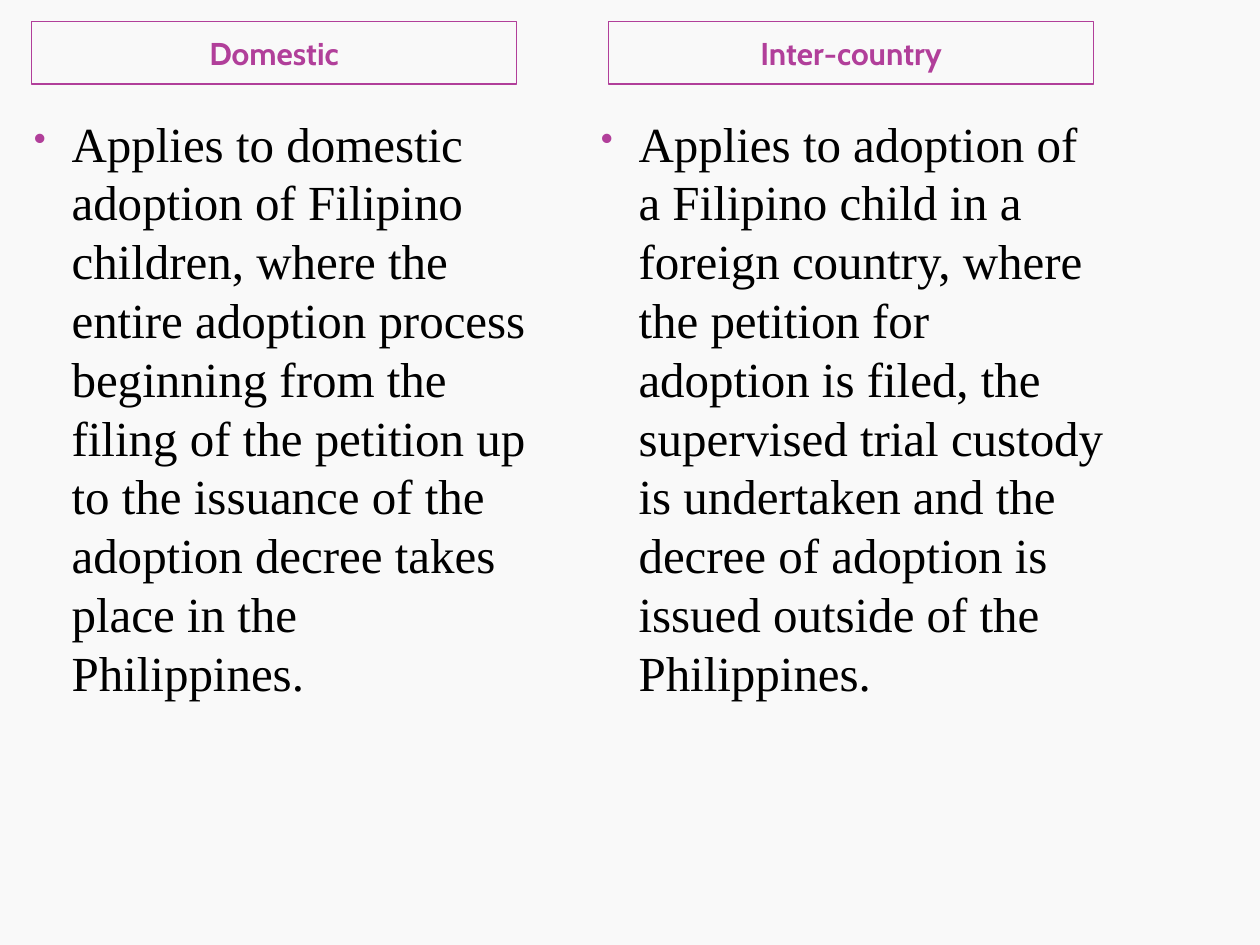
from lxml.etree import SubElement
from pptx import Presentation
from pptx.dml.color import RGBColor
from pptx.enum.shapes import MSO_SHAPE
from pptx.enum.text import MSO_ANCHOR, PP_ALIGN
from pptx.oxml.ns import qn
from pptx.util import Inches, Pt

BACKGROUND = RGBColor(0xF9, 0xF9, 0xF9)
PURPLE = RGBColor(0xB1, 0x3F, 0x9A)
BLACK = RGBColor(0, 0, 0)

COLUMNS = [
    ("Domestic", 0.25, 0.17, 4.18,
     "Applies to domestic adoption of Filipino children, where the entire "
     "adoption process beginning from the filing of the petition up to the "
     "issuance of the adoption decree takes place in the Philippines."),
    ("Inter-country", 4.83, 4.67, 4.23,
     "Applies to adoption of a Filipino child in a foreign country, where the "
     "petition for adoption is filed, the supervised trial custody is "
     "undertaken and the decree of adoption is issued outside of the "
     "Philippines."),
]


def style_font(font, name, size, color, bold=False):
    font.name = name
    font.size = Pt(size)
    font.color.rgb = color
    font.bold = bold


def add_heading(slide, text, left):
    shape = slide.shapes.add_shape(
        MSO_SHAPE.RECTANGLE, Inches(left), Inches(0.17), Inches(3.85), Inches(0.5))
    shape.shadow.inherit = False
    shape.fill.background()
    shape.line.color.rgb = PURPLE
    shape.line.width = Pt(1)
    shape.text_frame.vertical_anchor = MSO_ANCHOR.MIDDLE
    paragraph = shape.text_frame.paragraphs[0]
    paragraph.text = text
    paragraph.alignment = PP_ALIGN.CENTER
    style_font(paragraph.font, "Cabin", 18, PURPLE, bold=True)


def add_bullet(paragraph):
    properties = paragraph._p.get_or_add_pPr()
    properties.set("marL", str(Inches(0.3)))
    properties.set("indent", str(Inches(-0.3)))
    color = SubElement(properties, qn("a:buClr"))
    SubElement(color, qn("a:srgbClr"), val=str(PURPLE))
    SubElement(properties, qn("a:buSzPct"), val="73000")
    SubElement(properties, qn("a:buChar"), char="•")


def add_body(slide, text, left, width):
    text_box = slide.shapes.add_textbox(
        Inches(left), Inches(0.85), Inches(width), Inches(6.4))
    text_box.text_frame.word_wrap = True
    paragraph = text_box.text_frame.paragraphs[0]
    paragraph.text = text
    add_bullet(paragraph)
    paragraph.line_spacing = Pt(33.6)
    style_font(paragraph.font, "Times New Roman", 28, BLACK)


def main():
    presentation = Presentation()
    presentation.slide_width = Inches(10)
    presentation.slide_height = Inches(7.5)
    slide = presentation.slides.add_slide(presentation.slide_layouts[6])
    slide.background.fill.solid()
    slide.background.fill.fore_color.rgb = BACKGROUND
    for heading, heading_left, body_left, body_width, body in COLUMNS:
        add_heading(slide, heading, heading_left)
        add_body(slide, body, body_left, body_width)
    presentation.save("out.pptx")


if __name__ == "__main__":
    main()
